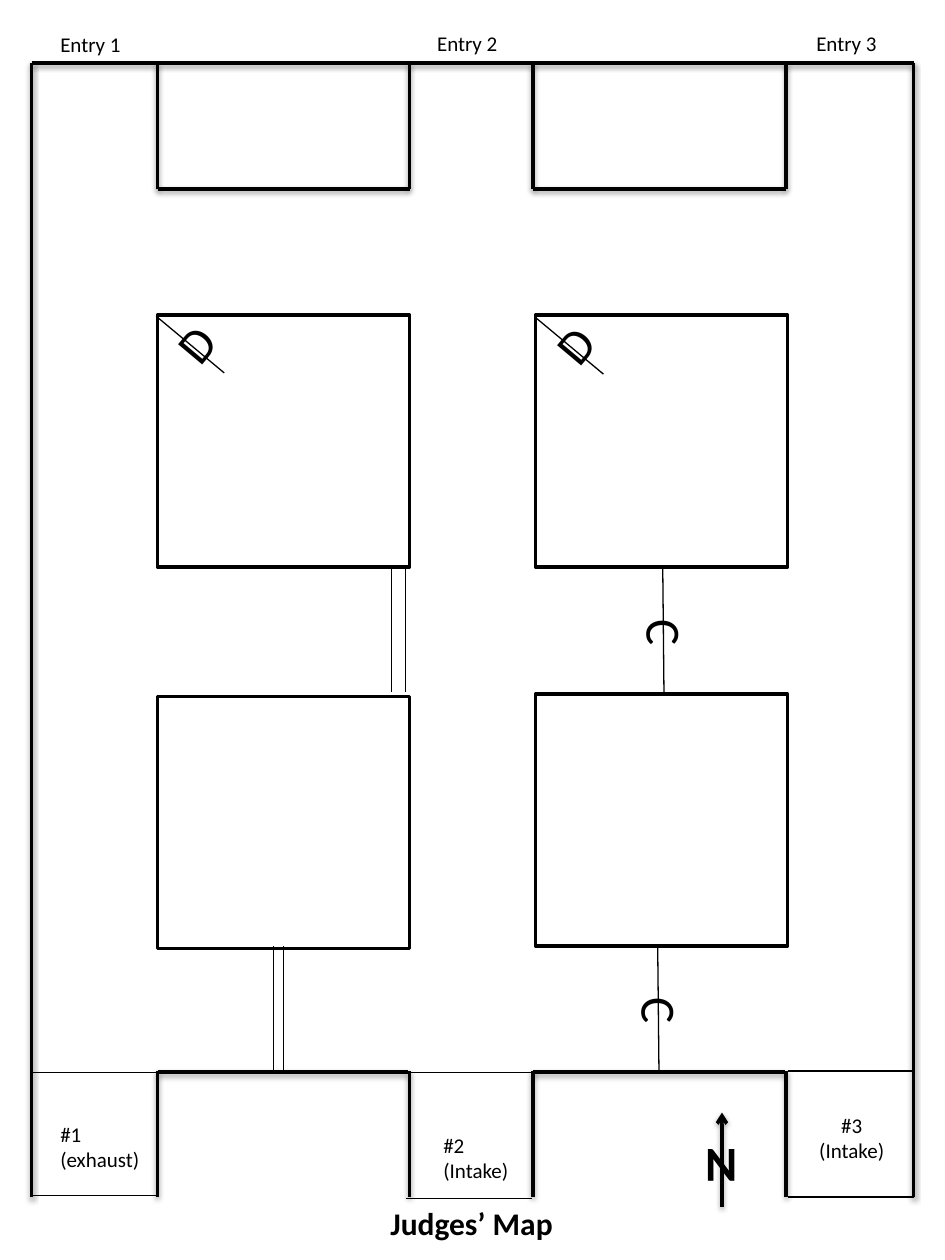
from lxml.etree import SubElement
from pptx import Presentation
from pptx.dml.color import RGBColor
from pptx.enum.shapes import MSO_CONNECTOR, MSO_SHAPE
from pptx.enum.text import MSO_ANCHOR, MSO_AUTO_SIZE, PP_ALIGN
from pptx.oxml.ns import qn
from pptx.util import Inches, Pt

COLOURS = {"ink": "000000", "paper": "FFFFFF"}
INK = RGBColor.from_string(COLOURS["ink"])
PAPER = RGBColor.from_string(COLOURS["paper"])
COLUMNS, ROWS = 7.5, 10
WALL, THIN = 2, 0.75

deck = Presentation()
deck.slide_width, deck.slide_height = Inches(COLUMNS), Inches(ROWS)
page = deck.slides.add_slide(deck.slide_layouts[6])
column = deck.slide_width / COLUMNS
row = deck.slide_height / ROWS


def draw_line(shapes, start, end, weight):
    """Draw a line between grid points; walls cast a soft shadow."""
    line = shapes.add_connector(
        MSO_CONNECTOR.STRAIGHT,
        int(start[0] * column), int(start[1] * row),
        int(end[0] * column), int(end[1] * row))
    line.line.color.rgb = INK
    line.line.width = Pt(weight)
    effects = SubElement(line._element.spPr, qn("a:effectLst"))
    if weight == WALL:
        shadow = SubElement(effects, qn("a:outerShdw"), blurRad=str(Pt(3.1)),
                            dist=str(Pt(1.6)), dir="5400000", rotWithShape="0")
        shade = SubElement(shadow, qn("a:srgbClr"), val=COLOURS["ink"])
        SubElement(shade, qn("a:alpha"), val="38000")
    return line


def write(shapes, lines, place, size=12, rotation=0, bold=False, wrap=False,
          align=PP_ALIGN.LEFT):
    """Write one paragraph per line in a box placed on the grid."""
    left, top, width, height = place
    box = shapes.add_textbox(int(left * column), int(top * row),
                             int(width * column), int(height * row))
    box.rotation = rotation
    frame_format = {"word_wrap": wrap, "vertical_anchor": MSO_ANCHOR.TOP,
                    "auto_size": MSO_AUTO_SIZE.SHAPE_TO_FIT_TEXT}
    for name, value in frame_format.items():
        setattr(box.text_frame, name, value)
    for index, text in enumerate(lines):
        para = (box.text_frame.add_paragraph() if index
                else box.text_frame.paragraphs[0])
        para.alignment = align
        span = para.add_run()
        span.text = text
        for name, value in {"name": "Calibri", "size": Pt(size), "bold": bold}.items():
            setattr(span.font, name, value)
        span.font.color.rgb = INK


# Four square rooms
for left, top in [(1.25, 2.5), (4.25, 2.5), (1.25, 5.53), (4.25, 5.51)]:
    room = page.shapes.add_shape(MSO_SHAPE.RECTANGLE, int(left * column),
                                 int(top * row), int(2 * column), int(2 * row))
    room.shadow.inherit = False
    room.fill.solid()
    room.fill.fore_color.rgb = PAPER
    room.line.color.rgb = INK
    room.line.width = Pt(WALL)

# Outer walls
for x in (0.25, 7.25):
    draw_line(page.shapes, (x, 9.5), (x, 0.5), WALL)
draw_line(page.shapes, (0.25, 0.5), (7.25, 0.5), WALL)

# Alcoves along the top and bottom walls
for left, right in [(1.25, 3.25), (4.23, 6.24)]:
    draw_line(page.shapes, (left, 1.5), (right, 1.5), WALL)
    draw_line(page.shapes, (left, 8.51), (right - 0.01, 8.51), WALL)
    for x in (left, right):
        draw_line(page.shapes, (x, 1.5), (x, 0.5), WALL)
        draw_line(page.shapes, (x, 8.5), (x, 9.5), WALL)

# Thin edges of the three bays
for left, top, bottom in [(0.25, 8.51, 9.49), (3.22, 8.51, 9.51), (6.25, 8.5, 9.5)]:
    for y in (top, bottom):
        draw_line(page.shapes, (left, y), (left + 1, y), THIN)

# Double barriers
for x, top in [(2.17, 7.51), (2.25, 7.51), (3.11, 4.5), (3.22, 4.5)]:
    draw_line(page.shapes, (x, top), (x, top + 0.99), THIN)

# Curtains, marked C
for x, top in [(5.26, 4.5), (5.22, 7.5)]:
    draw_line(page.shapes, (x, top), (x + 0.01, top + 1), THIN)
    write(page.shapes, ["C"], (x - 0.18, top + 0.24, 0.41, 0.57), 28, 90)

# Doors across room corners, marked D
for x, y in [(1.24, 2.51), (4.25, 2.52)]:
    draw_line(page.shapes, (x, y), (x + 0.54, y + 0.45), THIN)
    write(page.shapes, ["D"], (x + 0.09, y - 0.07, 0.44, 0.57), 28, 310)

# North arrow
north = page.shapes.add_group_shape().shapes
arrow = draw_line(north, (5.73, 9.58), (5.73, 8.83), WALL)
SubElement(arrow.line._get_or_add_ln(), qn("a:tailEnd"), type="arrow")
write(north, ["N"], (5.49, 8.99, 0.46, 0.57), 28, 180, bold=True)

# Entry, bay and map labels
for number, left, top in [(1, 0.38, 0.2), (2, 3.37, 0.19), (3, 6.38, 0.19)]:
    write(page.shapes, [f"Entry {number}"], (left, top, 0.69, 0.3))
write(page.shapes, ["#1", "(exhaust)"], (0.38, 8.85, 0.85, 0.5), wrap=True)
write(page.shapes, ["#2 (Intake)"], (3.42, 8.94, 0.81, 0.5), wrap=True)
write(page.shapes, ["#3", "(Intake)"], (6.4, 8.78, 0.72, 0.5), align=PP_ALIGN.CENTER)
write(page.shapes, ["Judges’ Map"], (3, 9.51, 1.5, 0.4), 18, bold=True)

deck.save("out.pptx")
